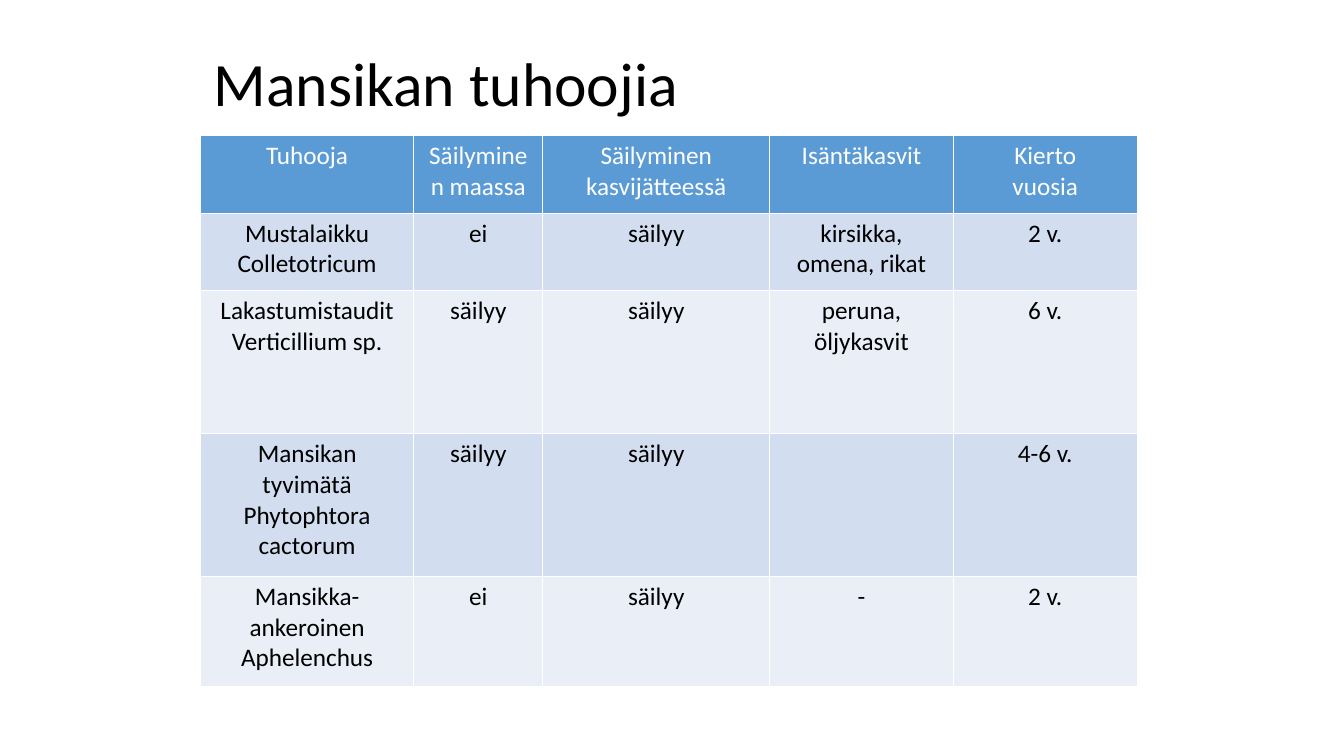
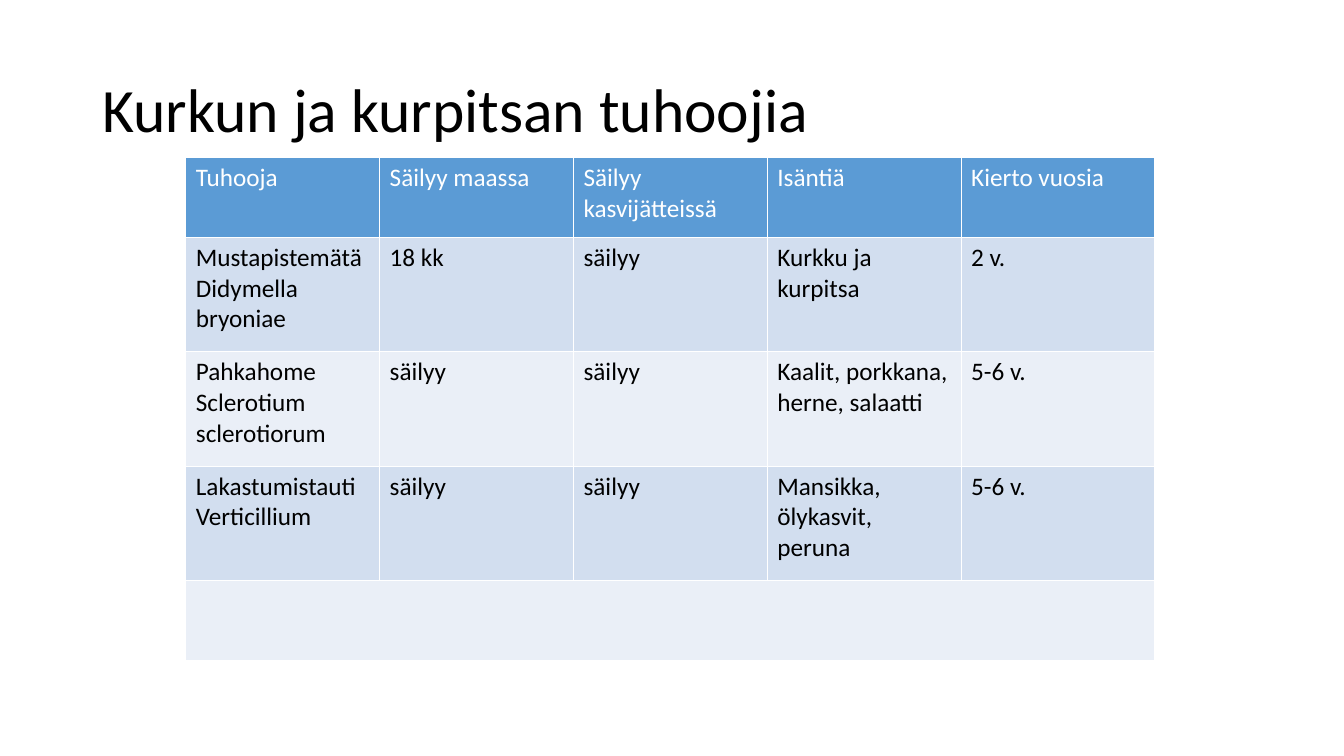
"""Build two slides of crop pest tables with rotation times."""
from dataclasses import dataclass

from pptx import Presentation
from pptx.dml.color import RGBColor
from pptx.enum.text import MSO_ANCHOR, PP_ALIGN
from pptx.util import Pt

EMU_PER_PX = 9525
TITLE_ONLY_LAYOUT = 5


@dataclass(frozen=True)
class Theme:
    font: str = "Calibri"
    title_size: int = 44
    table_size: int = 18
    text: str = "000000"
    header_text: str = "FFFFFF"
    header_fill: str = "5B9BD5"
    band_fills: tuple = ("D2DEEF", "EAEFF7")


THEME = Theme()

STRAWBERRY_PESTS = [
    ["Tuhooja", "Säilyminen maassa", "Säilyminen kasvijätteessä", "Isäntäkasvit", "Kierto\nvuosia"],
    ["Mustalaikku\nColletotricum", "ei", "säilyy", "kirsikka, omena, rikat", "2 v."],
    ["Lakastumistaudit\nVerticillium sp.", "säilyy", "säilyy", "peruna, öljykasvit", "6 v."],
    ["Mansikan tyvimätä\nPhytophtora cactorum", "säilyy", "säilyy", "", "4-6 v."],
    ["Mansikka-ankeroinen\nAphelenchus", "ei", "säilyy", "-", "2 v."],
]

CUCUMBER_PESTS = [
    ["Tuhooja", "Säilyy maassa", "Säilyy kasvijätteissä", "Isäntiä", "Kierto vuosia"],
    ["Mustapistemätä\nDidymella bryoniae", "18 kk", "säilyy", "Kurkku ja kurpitsa", "2 v."],
    ["Pahkahome\nSclerotium sclerotiorum", "säilyy", "säilyy", "Kaalit, porkkana, herne, salaatti", "5-6 v."],
    ["Lakastumistauti\nVerticillium", "säilyy", "säilyy", "Mansikka, ölykasvit, peruna", "5-6 v."],
    [""] * 5,
]


def px(length):
    return round(length * EMU_PER_PX)


def set_attributes(target, values):
    for name, value in values.items():
        setattr(target, name, value)


def format_text(text_frame, size, color, alignment, line_spacing=None):
    for paragraph in text_frame.paragraphs:
        set_attributes(paragraph, {"alignment": alignment, "line_spacing": line_spacing})
        set_attributes(paragraph.font, {"name": THEME.font, "size": Pt(size), "bold": False})
        paragraph.font.color.rgb = RGBColor.from_string(color)


def add_titled_slide(presentation, title, box):
    slide = presentation.slides.add_slide(presentation.slide_layouts[TITLE_ONLY_LAYOUT])
    shape = slide.shapes.title
    set_attributes(shape, dict(zip(("left", "top", "width", "height"), map(px, box))))
    shape.text_frame.text = title
    set_attributes(shape.text_frame, {"vertical_anchor": MSO_ANCHOR.MIDDLE, "word_wrap": True})
    format_text(shape.text_frame, THEME.title_size, THEME.text, PP_ALIGN.LEFT, 0.9)
    return slide


def fill_cell(cell, text, row_index, alignment):
    is_header = row_index == 0
    fill = THEME.header_fill if is_header else THEME.band_fills[(row_index - 1) % 2]
    cell.fill.solid()
    cell.fill.fore_color.rgb = RGBColor.from_string(fill)
    cell.text_frame.text = text
    color = THEME.header_text if is_header else THEME.text
    format_text(cell.text_frame, THEME.table_size, color, alignment)


def add_pest_table(slide, rows, position, column_widths, row_heights, alignment):
    left, top = position
    size = (sum(column_widths), sum(row_heights))
    frame = slide.shapes.add_table(len(rows), len(column_widths), *map(px, (left, top, *size)))
    table = frame.table
    for column, width in zip(table.columns, column_widths):
        column.width = px(width)
    for row, height in zip(table.rows, row_heights):
        row.height = px(height)
    for row_index, texts in enumerate(rows):
        for column_index, text in enumerate(texts):
            fill_cell(table.cell(row_index, column_index), text, row_index, alignment)
    return table


def add_strawberry_slide(presentation):
    slide = add_titled_slide(presentation, "Mansikan tuhoojia", (194, 36, 816, 92))
    add_pest_table(slide, STRAWBERRY_PESTS, (191, 129), (203, 123, 216, 175, 175),
                   (74, 74, 136, 136, 105), PP_ALIGN.CENTER)


def add_cucumber_slide(presentation):
    slide = add_titled_slide(presentation, "Kurkun ja kurpitsan tuhoojia", (88, 38, 1104, 139))
    table_width, column_count = 923, len(CUCUMBER_PESTS[0])
    table = add_pest_table(slide, CUCUMBER_PESTS, (177, 150),
                           [table_width / column_count] * column_count,
                           (76, 109, 109, 109, 76), PP_ALIGN.LEFT)
    last_row = len(CUCUMBER_PESTS) - 1
    table.cell(last_row, 0).merge(table.cell(last_row, column_count - 1))


def main():
    presentation = Presentation()
    set_attributes(presentation, {"slide_width": px(1280), "slide_height": px(720)})
    add_strawberry_slide(presentation)
    add_cucumber_slide(presentation)
    presentation.save("out.pptx")


if __name__ == "__main__":
    main()
